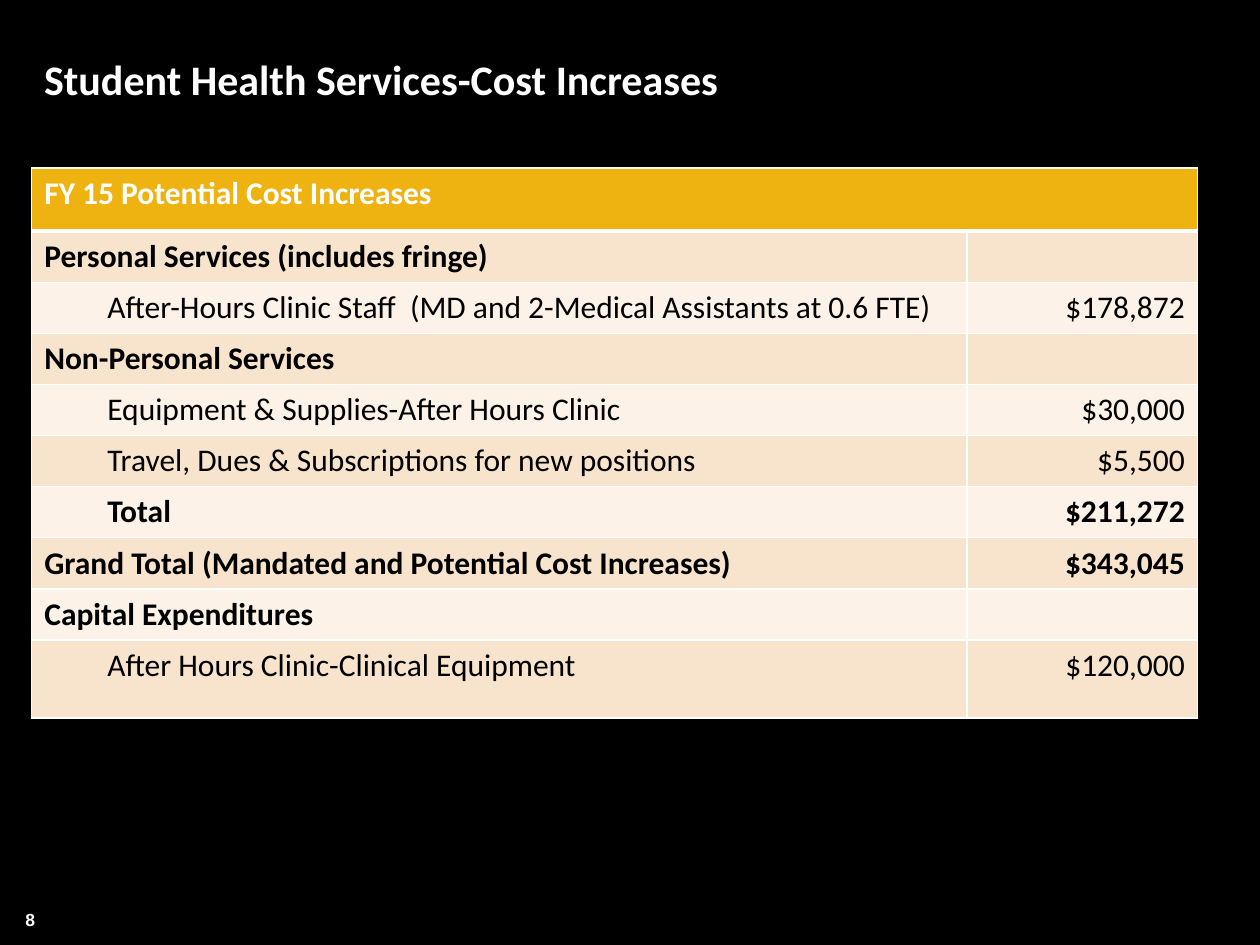
from dataclasses import dataclass

from lxml.etree import SubElement
from pptx import Presentation
from pptx.dml.color import RGBColor as RGB
from pptx.enum.text import MSO_ANCHOR as ANCHOR, PP_ALIGN as ALIGN
from pptx.oxml.ns import qn
from pptx.util import Cm, Pt


@dataclass(frozen=True)
class Theme:
    background: str = "000000"
    light: str = "FFFFFF"
    dark: str = "000000"
    header: str = "EEB211"
    bands: tuple = ("F8E4CC", "FCF2E7")
    font: str = "Calibri"
    number_font: str = "Arial"
    title_size: int = 24
    table_size: int = 18
    number_size: int = 10


class Deck:
    """Builds styled elements on the current slide."""

    def __init__(self, prs, theme):
        self.theme = theme
        self.s = prs.slides.add_slide(prs.slide_layouts[6])
        fill = self.s.background.fill
        fill.solid()
        fill.fore_color.rgb = RGB.from_string(theme.background)

    def set_text(self, tf, text, size, color, bold=True, align=ALIGN.LEFT, font=None):
        p = tf.paragraphs[0]
        p.text = text
        p.alignment = align
        for f in [p.font] + [r.font for r in p.runs]:
            f.name = font or self.theme.font
            f.size = Pt(size)
            f.bold = bold
            f.color.rgb = RGB.from_string(color)
        return p

    def title(self, text, *box):
        tf = self.s.shapes.add_textbox(*map(Cm, box)).text_frame
        tf.word_wrap = True
        tf.vertical_anchor = ANCHOR.MIDDLE
        self.set_text(tf, text, self.theme.title_size, self.theme.light)

    def page_number(self, text, *box):
        tf = self.s.shapes.add_textbox(*map(Cm, box)).text_frame
        tf.word_wrap = True
        tf.margin_left = tf.margin_right = 0
        self.set_text(tf, text, self.theme.number_size, self.theme.light,
                      align=ALIGN.CENTER, font=self.theme.number_font)

    def paint(self, cell, color, bottom=1):
        tcPr = cell._tc.get_or_add_tcPr()
        for side, width in zip("LRTB", (1, 1, 1, bottom)):
            ln = SubElement(tcPr, qn(f"a:ln{side}"), w=str(Pt(width)))
            solid = SubElement(ln, qn("a:solidFill"))
            SubElement(solid, qn("a:srgbClr"), val=self.theme.light)
        cell.fill.solid()
        cell.fill.fore_color.rgb = RGB.from_string(color)

    def cost_table(self, heading, rows, widths, heights, left, top):
        t = self.theme
        table = self.s.shapes.add_table(
            len(rows) + 1, 2, Cm(left), Cm(top), Cm(sum(widths)), Cm(sum(heights))).table
        for col, width in zip(table.columns, widths):
            col.width = Cm(width)
        for row, height in zip(table.rows, heights):
            row.height = Cm(height)
        for cell in table.rows[0].cells:
            self.paint(cell, t.header, bottom=3)
        table.cell(0, 0).merge(table.cell(0, 1))
        self.set_text(table.cell(0, 0).text_frame, heading, t.table_size, t.light)
        for i, (label, amount, indented, bold) in enumerate(rows, 1):
            name, cost = table.cell(i, 0), table.cell(i, 1)
            for cell in (name, cost):
                self.paint(cell, t.bands[(i - 1) % 2])
            p = self.set_text(name.text_frame, label, t.table_size, t.dark, bold)
            if indented:
                p._p.get_or_add_pPr().set("marL", str(Cm(1.27)))
            self.set_text(cost.text_frame, amount, t.table_size, t.dark, bold, ALIGN.RIGHT)


def main():
    prs = Presentation()
    prs.slide_width, prs.slide_height = Cm(25.4), Cm(19.05)
    deck = Deck(prs, Theme())
    deck.page_number("8", 0.05, 18.19, 1.12, 0.69)
    deck.title("Student Health Services-Cost Increases", 0.64, 0, 24.33, 3.18)
    rows = [
        ("Personal Services (includes fringe)", "", False, True),
        ("After-Hours Clinic Staff  (MD and 2-Medical Assistants at 0.6 FTE)",
         "$178,872", True, False),
        ("Non-Personal Services", "", False, True),
        ("Equipment & Supplies-After Hours Clinic", "$30,000", True, False),
        ("Travel, Dues & Subscriptions for new positions", "$5,500", True, False),
        ("Total", "$211,272", True, True),
        ("Grand Total (Mandated and Potential Cost Increases)", "$343,045", False, True),
        ("Capital Expenditures", "", False, True),
        ("After Hours Clinic-Clinical Equipment", "$120,000", True, False),
    ]
    heights = [1.27] + [1.03] * (len(rows) - 1) + [1.57]
    deck.cost_table("FY 15 Potential Cost Increases", rows, (18.85, 4.65), heights, 0.64, 3.39)
    prs.save("out.pptx")


if __name__ == "__main__":
    main()
